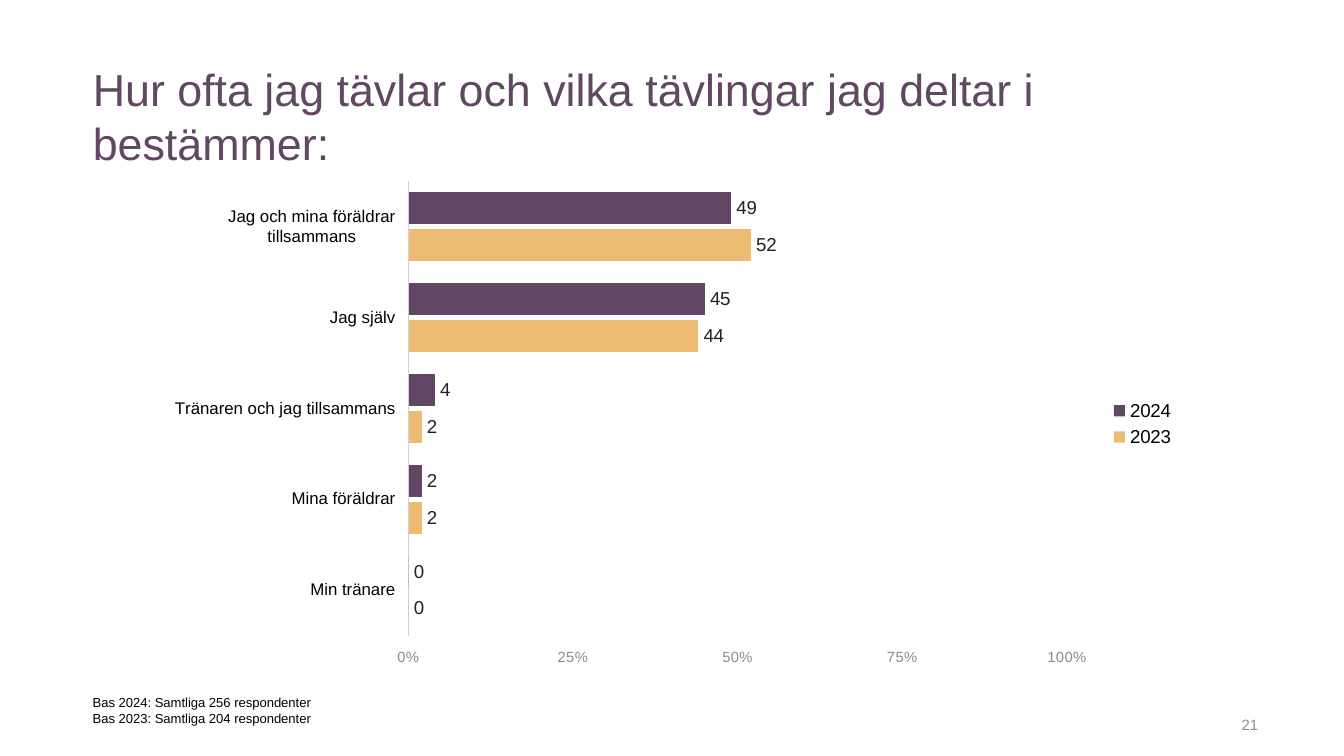
import pptx
import pptx.util
import pptx.chart.data
import pptx.dml.color
import pptx.enum.chart
import pptx.enum.text
import pptx.oxml

Inches = pptx.util.Inches
Pt = pptx.util.Pt
ENUM = pptx.enum.chart
ALIGN = pptx.enum.text.PP_ALIGN
ANCHOR = pptx.enum.text.MSO_ANCHOR

WIDTH = 10
HEIGHT = WIDTH * 9 / 16
HUES = {
    "plum": "624764",
    "gold": "EBBC71",
    "ink": "000000",
    "label": "212121",
    "gray": "8C8C8C",
    "line": "D1D1D1",
}
CATS = [
    "Min tränare",
    "Mina föräldrar",
    "Tränaren och jag tillsammans",
    "Jag själv",
    "Jag och mina föräldrar tillsammans",
]
ROWS = [
    ("2023", (0, 2, 2, 44, 52), "gold"),
    ("2024", (0, 2, 4, 45, 49), "plum"),
]
PLOT = (1.89, 0.07, 4.9, 3.38)


def apply(item, form):
    for key, value in form.items():
        setattr(item, key, value)


def color(name):
    return pptx.dml.color.RGBColor.from_string(HUES[name])


def style(font, size, hue):
    apply(font, {"name": "Arial", "size": Pt(size), "bold": False})
    font.color.rgb = color(hue)


def add_text(slide, box, lines, size, hue, frame_form, line_form):
    frame = slide.shapes.add_textbox(*map(Inches, box)).text_frame
    apply(frame, {"word_wrap": True, **frame_form})
    frame.text = "\n".join(lines)
    for line in frame.paragraphs:
        apply(line, line_form)
        for run in line.runs:
            style(run.font, size, hue)


def set_plot(chart, box):
    ns = pptx.oxml.ns.nsdecls("c")
    modes = "".join(f'<c:{k}Mode val="edge"/>' for k in "xy")
    sizes = "".join(
        f'<c:{k} val="{part / whole}"/>'
        for k, part, whole in zip("xywh", PLOT, box[2:] * 2)
    )
    layout = pptx.oxml.parse_xml(
        f'<c:layout {ns}><c:manualLayout><c:layoutTarget val="inner"/>'
        f"{modes}{sizes}</c:manualLayout></c:layout>"
    )
    area = chart.plots[0]._element.getparent()
    for old in area.findall(pptx.oxml.ns.qn("c:layout")):
        area.remove(old)
    area.insert(0, layout)


def set_axes(chart):
    cat, val = chart.category_axis, chart.value_axis
    for axis, size, hue in ((cat, 9, "ink"), (val, 7.9, "gray")):
        apply(axis, {
            "has_major_gridlines": False,
            "major_tick_mark": ENUM.XL_TICK_MARK.NONE,
            "minor_tick_mark": ENUM.XL_TICK_MARK.NONE,
            "tick_label_position": ENUM.XL_TICK_LABEL_POSITION.LOW,
        })
        style(axis.tick_labels.font, size, hue)
    cat.format.line.color.rgb = color("line")
    cat.format.line.width = Pt(0.75)
    val.format.line.fill.background()
    apply(val, {"minimum_scale": 0, "maximum_scale": 100, "major_unit": 25})
    apply(val.tick_labels, {
        "number_format": r"General\%", "number_format_is_linked": False,
    })


def add_bars(slide, box):
    data = pptx.chart.data.CategoryChartData()
    data.categories = CATS
    for name, values, _ in ROWS:
        data.add_series(name, values)
    chart = slide.shapes.add_chart(
        ENUM.XL_CHART_TYPE.BAR_CLUSTERED, *map(Inches, box), data
    ).chart
    apply(chart, {"has_title": False, "has_legend": True})
    style(chart.font, 10, "label")
    apply(chart.legend, {
        "position": ENUM.XL_LEGEND_POSITION.RIGHT, "include_in_layout": False,
    })
    style(chart.legend.font, 10, "ink")
    plot = chart.plots[0]
    apply(plot, {"gap_width": 70, "overlap": -16, "vary_by_categories": False})
    for series, (_, _, hue) in zip(plot.series, ROWS):
        series.format.fill.solid()
        series.format.fill.fore_color.rgb = color(hue)
        labels = series.data_labels
        apply(labels, {
            "show_value": True,
            "position": ENUM.XL_LABEL_POSITION.OUTSIDE_END,
            "number_format": "0",
            "number_format_is_linked": False,
        })
        style(labels.font, 10, "label")
    set_axes(chart)
    set_plot(chart, box)


def main():
    deck = pptx.Presentation()
    apply(deck, {
        "slide_width": Inches(WIDTH), "slide_height": Inches(HEIGHT),
    })
    slide = deck.slides.add_slide(deck.slide_layouts[6])
    sides = ("left", "top", "right", "bottom")
    flush = {f"margin_{side}": 0 for side in sides}
    add_text(slide, (7.21, 5.21, 2.25, 0.3), ["21"], 8, "gray",
             {"vertical_anchor": ANCHOR.BOTTOM}, {"alignment": ALIGN.RIGHT})
    add_text(slide, (0.69, 0.46, 8.58, 0.82),
             ["Hur ofta jag tävlar och vilka tävlingar jag deltar i bestämmer:"],
             24, "plum", flush, {})
    add_bars(slide, (1.15, 1.28, 7.69, 3.75))
    add_text(slide, (0.69, 5.17, 1.8, 0.31),
             ["Bas 2024: Samtliga 256 respondenter",
              "Bas 2023: Samtliga 204 respondenter"],
             7, "ink", flush, {})
    deck.save("out.pptx")


if __name__ == "__main__":
    main()
